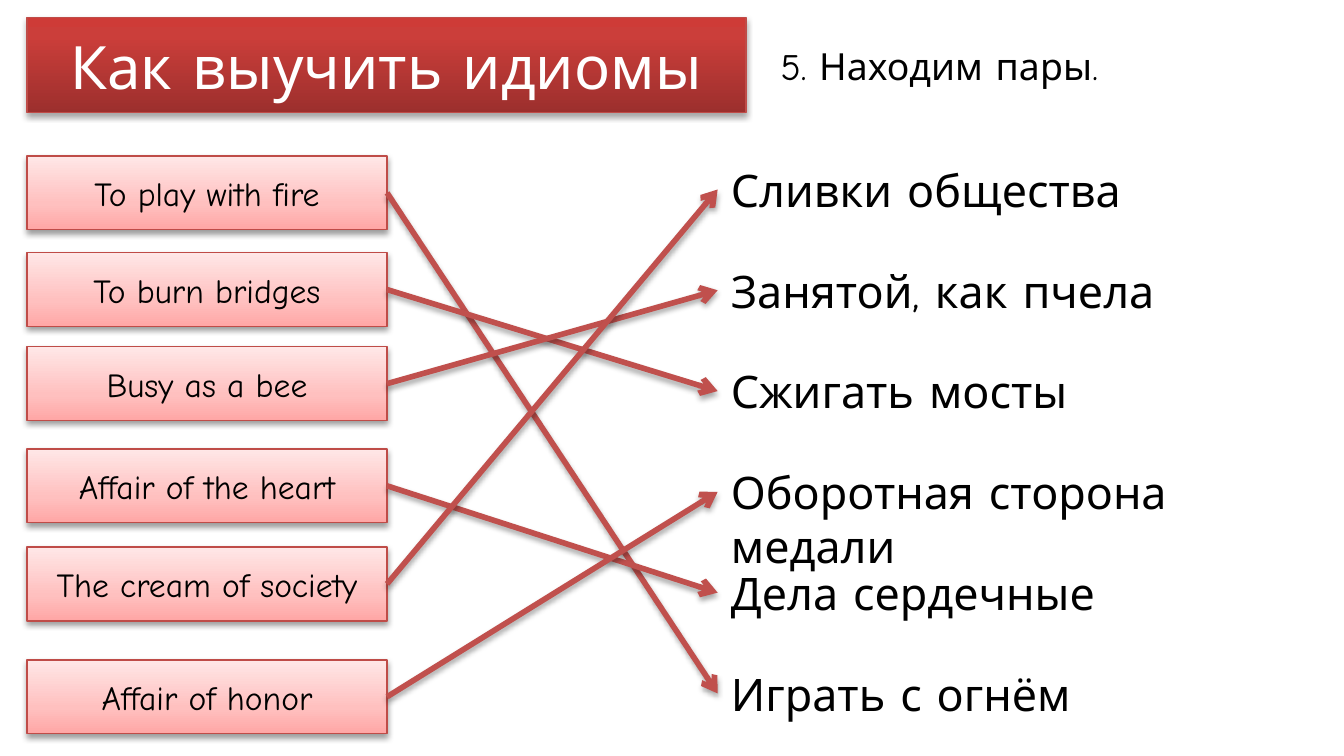
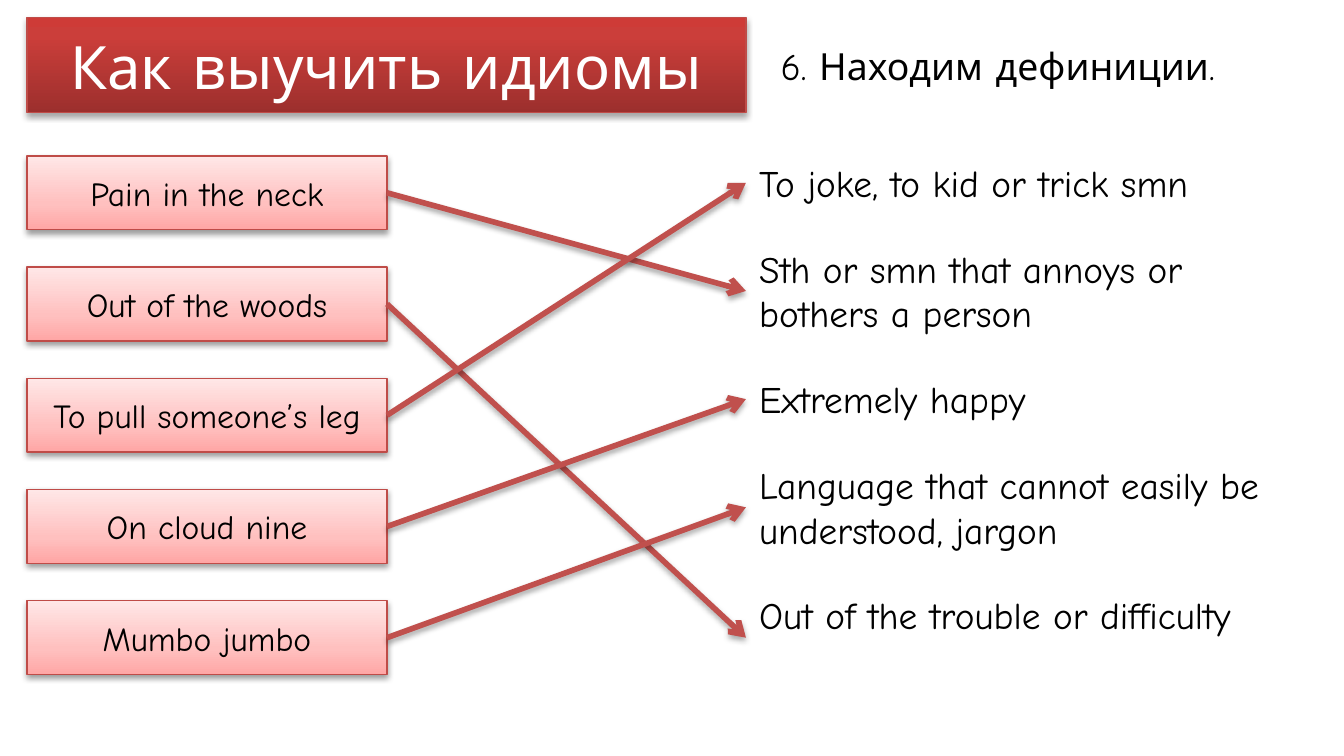
from lxml.etree import SubElement
from pptx import Presentation
from pptx.dml.color import RGBColor
from pptx.enum.shapes import MSO_CONNECTOR, MSO_SHAPE
from pptx.enum.text import MSO_ANCHOR, MSO_AUTO_SIZE, PP_ALIGN
from pptx.oxml.ns import qn
from pptx.util import Inches, Pt

# Shared look
COLORS = {"border": "BF4C48", "arrow": "C0504D", "text": "000000",
          "heading": "FFFFFF", "shadow": "000000"}
HEADING_FILL = [(0, "9C2F2D"), (80, "CB3E3A"), (100, "CE3B37")]
IDIOM_FILL = [(0, "FFA6A5"), (35, "FFC0BF"), (100, "FFE7E7")]
FONT = "Comic Neue"
LEFT, IDIOM_WIDTH, IDIOM_HEIGHT = 0.2, 2.68, 0.55

# Each meaning: text, width, height; each match: index of the idiom's meaning
EXERCISES = [
    {
        "task": "5. Находим пары.",
        "idioms": ["To play with fire", "To burn bridges", "Busy as a bee",
                   "Affair of the heart", "The cream of society", "Affair of honor"],
        "idiom_tops": [1.16, 1.88, 2.58, 3.34, 4.07, 4.91],
        "meanings": [("Сливки общества", 3.54, 0.5),
                     ("Занятой, как пчела", 3.54, 0.5),
                     ("Сжигать мосты", 3.54, 0.5),
                     ("Оборотная сторона медали", 4.65, 0.5),
                     ("Дела сердечные", 3.54, 0.5),
                     ("Играть с огнём", 3.54, 0.5)],
        "meaning_left": 5.34, "meaning_top": 1.16, "gap": 0.25, "size": 24,
        "matches": [5, 2, 1, 4, 0, 3],
    },
    {
        "task": "6. Находим дефиниции.",
        "idioms": ["Pain in the neck", "Out of the woods", "To pull someone’s leg",
                   "On cloud nine", "Mumbo jumbo"],
        "idiom_tops": [1.16 + i * 3.31 / 4 for i in range(5)],
        "meanings": [("To joke, to kid or trick smn", 3.93, 0.44),
                     ("Sth or smn that annoys or bothers a person", 4.05, 0.77),
                     ("Extremely happy", 2.52, 0.44),
                     ("Language that cannot easily be understood, jargon", 4.05, 0.77),
                     ("Out of the trouble or difficulty", 3.93, 0.77)],
        "meaning_left": 5.55, "meaning_top": 1.14, "gap": 0.2, "size": 20,
        "matches": [1, 4, 0, 2, 3],
    },
]


def write(shape, text, size, color="text", align=PP_ALIGN.LEFT,
          anchor=MSO_ANCHOR.TOP, fit=MSO_AUTO_SIZE.SHAPE_TO_FIT_TEXT):
    frame = shape.text_frame
    frame.word_wrap = True
    frame.auto_size = fit
    frame.vertical_anchor = anchor
    paragraph = frame.paragraphs[0]
    paragraph.alignment = align
    run = paragraph.add_run()
    run.text = text
    run.font.name = FONT
    run.font.size = Pt(size)
    run.font.color.rgb = RGBColor.from_string(COLORS[color])


def style(shape, line_color, line_width, stops=None, opacity=35, distance=1.8):
    """Give a shape its gradient, its line and a soft shadow below."""
    properties = shape._element.spPr
    if stops:
        shape.fill.gradient()
        gradient = properties.find(qn("a:gradFill"))
        stop_list = gradient.find(qn("a:gsLst"))
        for old_stop in list(stop_list):
            stop_list.remove(old_stop)
        for position, color in stops:
            stop = SubElement(stop_list, qn("a:gs"), pos=str(position * 1000))
            SubElement(stop, qn("a:srgbClr"), val=color)
        gradient.find(qn("a:lin")).set("ang", str(270 * 60000))
    shape.line.color.rgb = RGBColor.from_string(COLORS[line_color])
    shape.line.width = Pt(line_width)
    effects = SubElement(properties, qn("a:effectLst"))
    shadow = SubElement(effects, qn("a:outerShdw"), blurRad=str(Pt(3.1)),
                        dist=str(Pt(distance)), dir=str(90 * 60000), rotWithShape="0")
    tint = SubElement(shadow, qn("a:srgbClr"), val=COLORS["shadow"])
    SubElement(tint, qn("a:alpha"), val=str(opacity * 1000))


# Widescreen, 16:9
prs = Presentation()
prs.slide_width = Inches(10)
prs.slide_height = Inches(10 * 9 / 16)

for exercise in EXERCISES:
    slide = prs.slides.add_slide(prs.slide_layouts[5])
    shapes = slide.shapes

    # Heading and task
    heading = shapes.title
    heading.left, heading.top = Inches(LEFT), Inches(0.13)
    heading.width, heading.height = Inches(5.35), Inches(0.71)
    style(heading, "border", 0.75, HEADING_FILL)
    write(heading, "Как выучить идиомы", size=32, color="heading",
          align=PP_ALIGN.CENTER, anchor=MSO_ANCHOR.MIDDLE, fit=MSO_AUTO_SIZE.NONE)
    task = shapes.add_textbox(Inches(5.71), Inches(0.27), Inches(3.94), Inches(0.44))
    write(task, exercise["task"], size=20)

    # Idioms on the left
    idioms = []
    for text, top in zip(exercise["idioms"], exercise["idiom_tops"]):
        idiom = shapes.add_shape(MSO_SHAPE.RECTANGLE, Inches(LEFT), Inches(top),
                                 Inches(IDIOM_WIDTH), Inches(IDIOM_HEIGHT))
        style(idiom, "border", 0.75, IDIOM_FILL, opacity=38, distance=1.6)
        write(idiom, text, size=18, align=PP_ALIGN.CENTER,
              anchor=MSO_ANCHOR.MIDDLE, fit=MSO_AUTO_SIZE.NONE)
        idioms.append(idiom)

    # Meanings on the right, stacked with equal gaps
    meanings = []
    top = exercise["meaning_top"]
    for text, width, height in exercise["meanings"]:
        meaning = shapes.add_textbox(Inches(exercise["meaning_left"]), Inches(top),
                                     Inches(width), Inches(height))
        write(meaning, text, size=exercise["size"])
        meanings.append(meaning)
        top += height + exercise["gap"]

    # Arrows from each idiom to its meaning
    for idiom, match in zip(idioms, exercise["matches"]):
        arrow = shapes.add_connector(MSO_CONNECTOR.STRAIGHT, 0, 0, 0, 0)
        arrow.begin_connect(idiom, 3)
        arrow.end_connect(meanings[match], 1)
        style(arrow, "arrow", 3)
        SubElement(arrow._element.spPr.find(qn("a:ln")), qn("a:tailEnd"), type="arrow")

prs.save("out.pptx")
